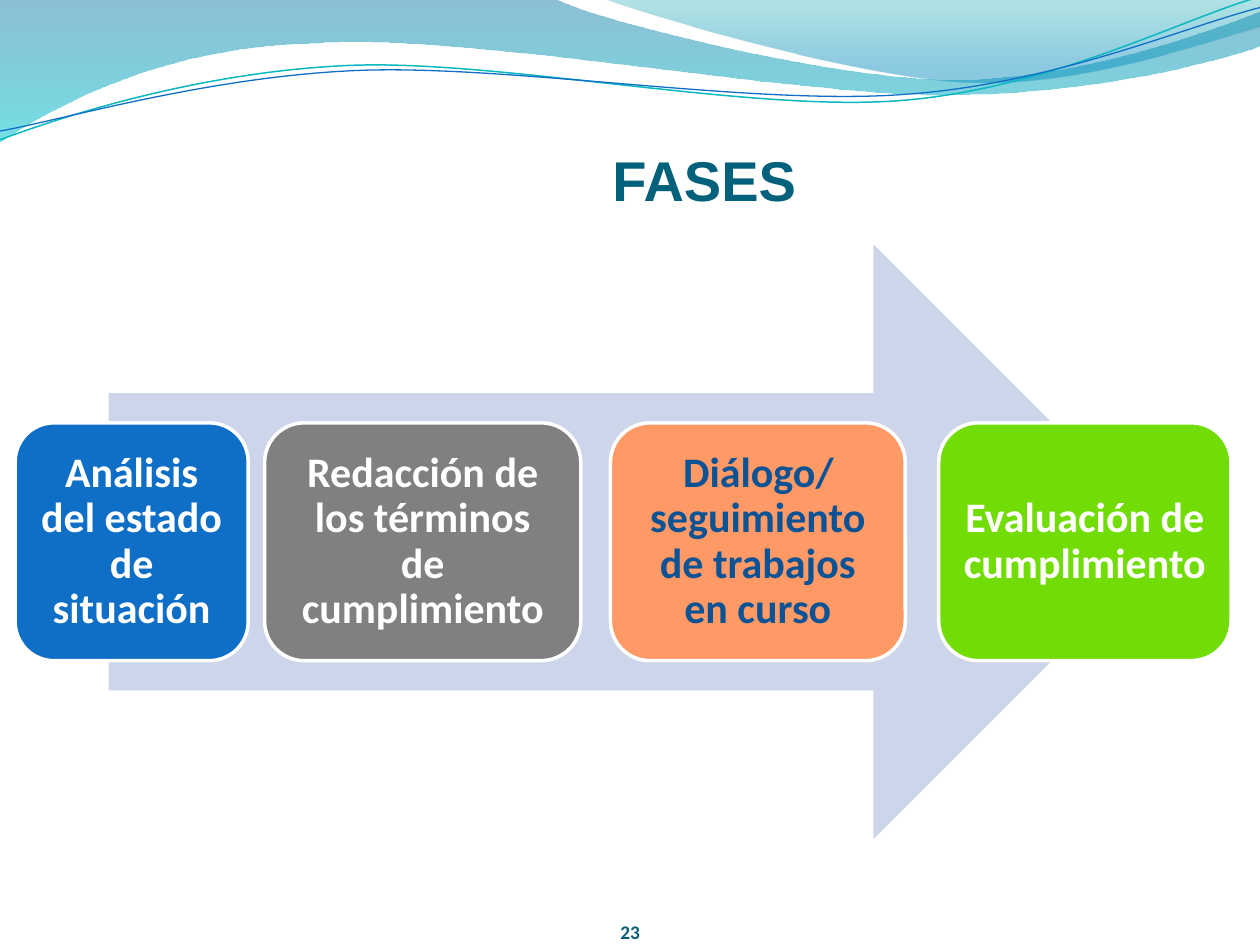
import pptx
import pptx.util
from lxml import etree
from pptx.dml.color import RGBColor
from pptx.enum.shapes import MSO_SHAPE
from pptx.enum.text import MSO_ANCHOR, MSO_AUTO_SIZE, PP_ALIGN
from pptx.oxml.ns import qn

WIDTH, HEIGHT = pptx.util.Inches(10), pptx.util.Inches(7.5)
COLUMNS, ROWS = 100, 75
UNIT = WIDTH / COLUMNS

WHITE = RGBColor(0xFF, 0xFF, 0xFF)
BLUE = RGBColor(0x0F, 0x6F, 0xC6)
GREY = RGBColor(0x80, 0x80, 0x80)
ORANGE = RGBColor(0xFF, 0x99, 0x66)
GREEN = RGBColor(0x71, 0xDC, 0x06)
DARK_BLUE = RGBColor(0x0B, 0x53, 0x94)
PALE_BLUE = RGBColor(0xCC, 0xD5, 0xEA)
TITLE_TEAL = RGBColor(0x04, 0x61, 0x7B)
NUMBER_TEAL = RGBColor(0x04, 0x5D, 0x75)
LINE_TEAL = RGBColor(0x0A, 0xB8, 0xBF)
WAVE_BLUE = RGBColor(0x00, 0x74, 0xA1)
WAVE_CYAN = RGBColor(0x00, 0xC6, 0xCF)
CREST_TEAL = RGBColor(0x00, 0xA1, 0xA9)
CREST_BLUE = RGBColor(0x00, 0x8B, 0xBF)

# Outlines in grid units: a pair is a corner, six numbers are a Bezier curve.
# Gradient stops: position, colour, opacity in percent.
WAVES = [
    ([(0, 0), (44, -0.1), (47.6, 1.7, 66.4, 6.3, 75.8, 6.3),
      (85.3, 6.3, 95.8, 2.6, 100, 0.9), (100.1, 3.6),
      (98.3, 4.4, 87, 7.6, 74.6, 7.5), (62.2, 7.5, 38.2, 2.8, 25.7, 3.4),
      (12.9, 3.6, 4.6, 8.3, -0.1, 11.3)],
     [(0, WAVE_BLUE, 45), (1, WAVE_CYAN, 55)]),
    ([(47.9, -0.1), (50.9, 1.1, 68.2, 6.2, 76.9, 6.5),
      (85.6, 6.9, 96.1, 3.2, 100, 2.1), (100, 0)],
     [(0, CREST_TEAL, 30), (0.8, CREST_BLUE, 45)]),
]
WAVE_LINES = [
    ([(0, 11.1), (4.8, 9.3, 15.8, 5.7, 27.7, 5.2),
      (39.5, 4.7, 59.3, 8.9, 71.3, 8), (83.3, 7.1, 93.8, 1.5, 99.8, -0.2)],
     LINE_TEAL, 0.85),
    ([(0, 10.4), (4.7, 9.6, 16.4, 6.1, 28.3, 5.6),
      (40.3, 5.1, 59.7, 8.4, 71.7, 7.5), (83.6, 6.7, 94.1, 2.1, 100, 0.6)],
     BLUE, 0.75),
]

# Left column, column span, fill, text colour, text
PHASES = [
    (1.2, 18.5, BLUE, WHITE, "Análisis del estado de situación"),
    (21, 25.1, GREY, WHITE, "Redacción de los términos de cumplimiento"),
    (48.45, 23.4, ORANGE, DARK_BLUE, "Diálogo/seguimiento de trabajos en curso"),
    (74.5, 23.2, GREEN, WHITE, "Evaluación de cumplimiento"),
]


def grid(*cells):
    return [round(cell * UNIT) for cell in cells]


def add_outline(s, steps, close):
    """Draw the outline through its corners, then bend the curved sides."""
    ends = [grid(*step[-2:]) for step in steps]
    builder = s.shapes.build_freeform(*ends[0], scale=1.0)
    builder.add_line_segments(ends[1:], close=close)
    sp = builder.convert_to_shape()
    sp.shadow.inherit = False
    sides = list(sp.element.spPr.iter(qn("a:lnTo")))
    for side, step in zip(sides, steps[1:]):
        if len(step) == 2:
            continue
        curve = etree.Element(qn("a:cubicBezTo"))
        values = grid(*step)
        for x, y in zip(values[::2], values[1::2]):
            etree.SubElement(curve, qn("a:pt"), x=str(x - sp.left), y=str(y - sp.top))
        side.getparent().replace(side, curve)
    return sp


def add_waves(s):
    for steps, stops in WAVES:
        sp = add_outline(s, steps, True)
        sp.line.fill.background()
        sp.fill.gradient()
        sp.fill.gradient_angle = 270
        for stop, (position, color, _) in zip(sp.fill.gradient_stops, stops):
            stop.position = position
            stop.color.rgb = color
        colors = list(sp.element.spPr.iter(qn("a:srgbClr")))
        for node, (_, _, opacity) in zip(colors, stops):
            etree.SubElement(node, qn("a:alpha"), val=str(opacity * 1000))
    for steps, color, width in WAVE_LINES:
        sp = add_outline(s, steps, False)
        sp.fill.background()
        sp.line.color.rgb = color
        sp.line.width = pptx.util.Pt(width)


def write(sp, text, font, size, color, align, anchor, margins):
    """Set one bold paragraph; margins are left, top, right, bottom in grid units."""
    tf = sp.text_frame
    tf.word_wrap = True
    tf.auto_size = MSO_AUTO_SIZE.NONE
    tf.vertical_anchor = anchor
    tf.margin_left, tf.margin_top, tf.margin_right, tf.margin_bottom = grid(*margins)
    p = tf.paragraphs[0]
    p.alignment = align
    r = p.add_run()
    r.text = text
    r.font.name = font
    r.font.size = pptx.util.Pt(size)
    r.font.bold = True
    r.font.color.rgb = color
    return p


def add_title(s, left, top, width, height):
    sp = s.shapes.title
    sp.left, sp.top, sp.width, sp.height = grid(left, top, width, height)
    write(sp, "FASES", "Arial", 32, TITLE_TEAL, PP_ALIGN.CENTER,
          MSO_ANCHOR.MIDDLE, (0, 0.5, 0, 0))


def add_phases(s, left, top, width, height):
    """Draw the arrow in the box and the phase cards over its middle."""
    arrow = s.shapes.add_shape(MSO_SHAPE.RIGHT_ARROW, *grid(left, top, width, height))
    arrow.shadow.inherit = False
    arrow.fill.solid()
    arrow.fill.fore_color.rgb = PALE_BLUE
    arrow.line.fill.background()
    card_top, card_height = top + 0.3 * height, 0.4 * height
    for card_left, card_width, fill, color, text in PHASES:
        sp = s.shapes.add_shape(MSO_SHAPE.ROUNDED_RECTANGLE,
                                *grid(card_left, card_top, card_width, card_height))
        sp.shadow.inherit = False
        sp.fill.solid()
        sp.fill.fore_color.rgb = fill
        sp.line.color.rgb = WHITE
        sp.line.width = pptx.util.Pt(2)
        p = write(sp, text, "Calibri", 24, color, PP_ALIGN.CENTER,
                  MSO_ANCHOR.MIDDLE, (1, 1, 1, 1))
        p.line_spacing = 0.9


def add_slide_number(s, left, top, width, height):
    sp = s.shapes.add_textbox(*grid(left, top, width, height))
    write(sp, "23", "Calibri", 11, NUMBER_TEAL, PP_ALIGN.RIGHT,
          MSO_ANCHOR.BOTTOM, (0, 0, 0, 0))


def main():
    prs = pptx.Presentation()
    prs.slide_width, prs.slide_height = WIDTH, HEIGHT
    s = prs.slides.add_slide(prs.slide_layouts[5])
    add_waves(s)
    add_title(s, 24.8, 10.85, 62.2, 6.2)
    add_phases(s, 8.63, 19.4, 84.3, 47.2)
    add_slide_number(s, 46.1, ROWS - 3.25, 4.7, 3.1)
    prs.save("out.pptx")


if __name__ == "__main__":
    main()
